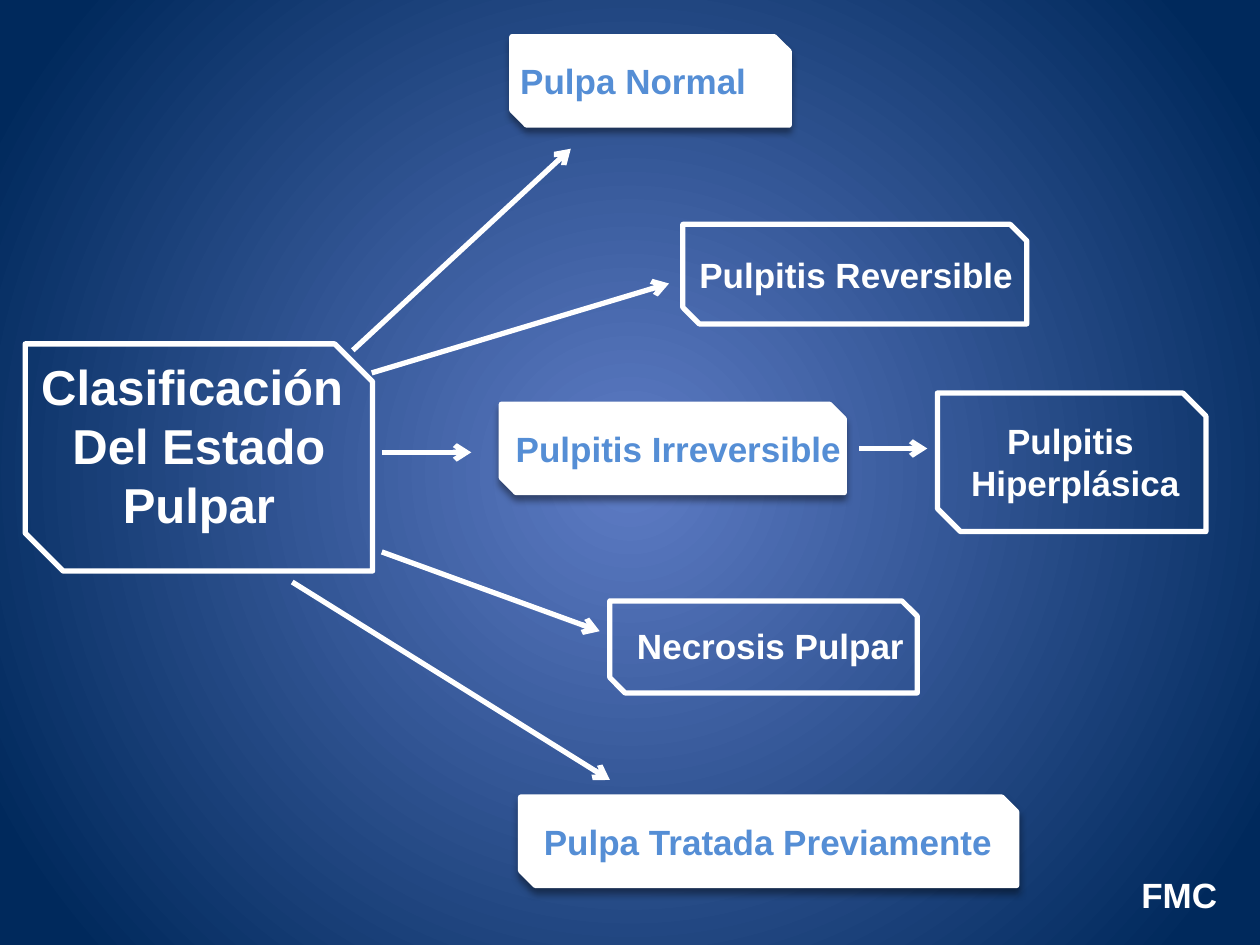
from lxml import etree
from pptx import Presentation
from pptx.dml.color import RGBColor
from pptx.enum import shapes, text
from pptx.oxml import ns
from pptx.util import Pt

COLORS = {"white": "FFFFFF", "label": "558ED5", "center": "5E7CC5",
          "edge": "00295C", "shadow": "000000"}
FONT = "Arial"

FILLED_BOXES = [
    (297.5, 455.5, 283.5, 50.5),
    (286.5, 231, 196, 50.5),
    (292.5, 21, 158.5, 50.5),
]
OUTLINED_BOXES = [
    (14.4, 196.5, 198.5, 129.8),
    (390.2, 128.2, 196.6, 56.9),
    (535.7, 224.6, 153.4, 79.2),
    (348.5, 343.4, 175.7, 52.6),
]
LABELS = [
    ("Pulpa Normal", (289.5, 30.2, 144.7, 31.5), "label"),
    ("Pulpitis Reversible", (391.7, 141.1, 195.1, 31.5), "white"),
    ("Pulpitis Irreversible", (286.5, 240.5, 202.3, 31.5), "label"),
    ("Pulpitis \nHiperplásica", (547.2, 236.2, 134.6, 55.4), "white"),
    ("Necrosis Pulpar", (355.7, 353.5, 169.2, 31.5), "white"),
    ("Pulpa Tratada Previamente ", (302.4, 465.1, 272.9, 31.5), "label"),
]
ARROWS = [
    (201.6, 200.2, 326.2, 85),
    (212.4, 213.1, 382.3, 162),
    (218.2, 258.5, 269.3, 258.5),
    (218.2, 315.4, 342.7, 360.7),
    (167, 332.6, 348.5, 445.7),
    (491, 256.3, 529.9, 256.3),
]


def color(name):
    """Return the named colour."""
    return RGBColor.from_string(COLORS[name])


def add_xml(parent, tag, **attributes):
    """Append a DrawingML element to its parent."""
    return etree.SubElement(parent, ns.qn(tag), attributes)


def paint_background(slide):
    """Fill the background with a circular gradient."""
    fill = slide.background.fill
    fill.gradient()
    for stop, name, position in zip(fill.gradient_stops, ("center", "edge"), (0, 0.92)):
        stop.color.rgb = color(name)
        stop.position = position
    gradient = slide.element.find(".//" + ns.qn("a:gradFill"))
    gradient.remove(gradient.find(ns.qn("a:lin")))
    circle = add_xml(gradient, "a:path", path="circle")
    add_xml(circle, "a:fillToRect", l="50000", t="50000", r="50000", b="50000")


def style_line(line):
    """Give a line the white stroke."""
    line.color.rgb = color("white")
    line.width = Pt(3)


def add_box(slide, bounds, filled):
    """Add a box with two snipped corners, filled with a shadow or outlined."""
    box = slide.shapes.add_shape(shapes.MSO_SHAPE.SNIP_2_DIAG_RECTANGLE, *map(Pt, bounds))
    box.shadow.inherit = False
    style_line(box.line)
    if not filled:
        box.fill.background()
        return
    box.fill.solid()
    box.fill.fore_color.rgb = color("white")
    effects = box.element.spPr.find(ns.qn("a:effectLst"))
    shadow = add_xml(effects, "a:outerShdw", blurRad=str(Pt(4)), dist=str(Pt(3)),
                     dir="5400000", rotWithShape="0")
    tint = add_xml(shadow, "a:srgbClr", val=COLORS["shadow"])
    add_xml(tint, "a:alpha", val="40000")


def write(shape, words, size, color_name, align=text.PP_ALIGN.CENTER):
    """Write bold text into a shape."""
    shape.text_frame.text = words
    for paragraph in shape.text_frame.paragraphs:
        paragraph.alignment = align
        for run in paragraph.runs:
            run.font.name = FONT
            run.font.size = Pt(size)
            run.font.bold = True
            run.font.color.rgb = color(color_name)


def add_title(slide, words, bounds):
    """Place and format the slide title."""
    title = slide.shapes.title
    title.left, title.top, title.width, title.height = map(Pt, bounds)
    frame = title.text_frame
    frame.word_wrap = True
    frame.auto_size = text.MSO_AUTO_SIZE.SHAPE_TO_FIT_TEXT
    frame.vertical_anchor = text.MSO_ANCHOR.TOP
    write(title, words, 28, "white")


def add_label(slide, words, bounds, color_name):
    """Add a centred label that does not wrap."""
    label = slide.shapes.add_textbox(*map(Pt, bounds))
    label.text_frame.word_wrap = False
    label.text_frame.auto_size = text.MSO_AUTO_SIZE.SHAPE_TO_FIT_TEXT
    write(label, words, 20, color_name)


def add_signature(slide, words, bounds):
    """Add the right-aligned initials in the corner."""
    signature = slide.shapes.add_textbox(*map(Pt, bounds))
    signature.text_frame.word_wrap = True
    signature.text_frame.vertical_anchor = text.MSO_ANCHOR.MIDDLE
    write(signature, words, 20, "white", text.PP_ALIGN.RIGHT)


def add_arrow(slide, ends):
    """Add a straight arrow between two points."""
    arrow = slide.shapes.add_connector(shapes.MSO_CONNECTOR.STRAIGHT, *map(Pt, ends))
    style_line(arrow.line)
    properties = arrow.element.find(ns.qn("p:spPr"))
    add_xml(properties.find(ns.qn("a:ln")), "a:tailEnd", type="arrow")
    add_xml(properties, "a:effectLst")


def main():
    """Build the slide and save it."""
    deck = Presentation()
    deck.slide_width, deck.slide_height = Pt(720), Pt(540)
    slide = deck.slides.add_slide(deck.slide_layouts[5])
    paint_background(slide)
    for bounds in FILLED_BOXES:
        add_box(slide, bounds, True)
    add_title(slide, "Clasificación \nDel Estado Pulpar", (14.4, 200.2, 198.5, 108.7))
    for words, bounds, color_name in LABELS:
        add_label(slide, words, bounds, color_name)
    add_signature(slide, "FMC", (640.1, 496.8, 62.6, 28.8))
    for bounds in OUTLINED_BOXES:
        add_box(slide, bounds, False)
    for ends in ARROWS:
        add_arrow(slide, ends)
    deck.save("out.pptx")


if __name__ == "__main__":
    main()
